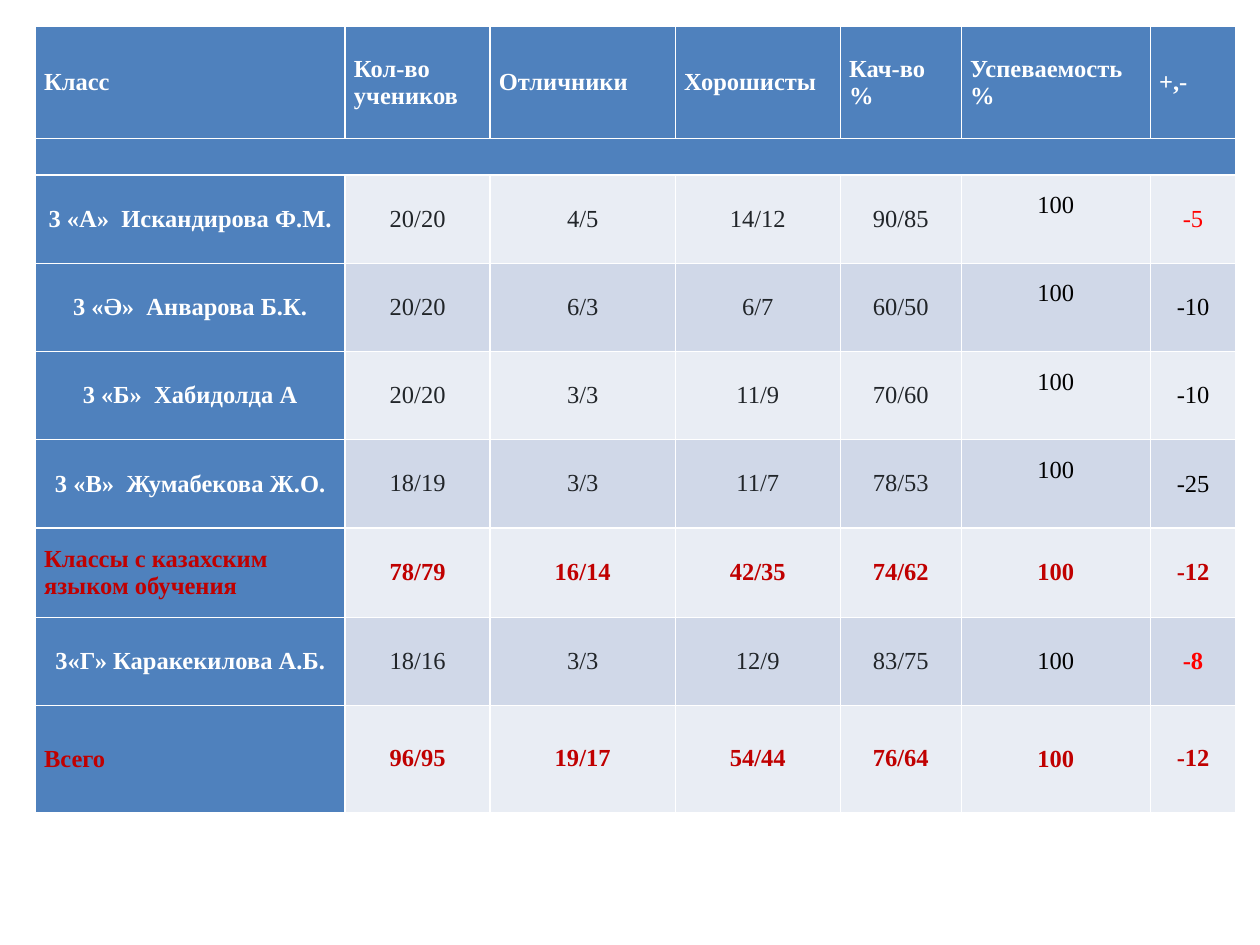
"""Build a slide with a table of third-grade class results."""
from pptx import Presentation
from pptx.dml.color import RGBColor
from pptx.enum.text import MSO_ANCHOR, PP_ALIGN
from pptx.util import Inches, Pt

BLUE, WHITE, INK, BLACK = "4F81BD", "FFFFFF", "212529", "000000"
RED, DARK_RED = "FF0000", "C00000"
BANDS = ["E9EDF4", "D0D8E8"]


def color(value):
    return RGBColor.from_string(value)


def fill_cell(cell, text, background, ink, bold, align, padding=0, spacing=None):
    cell.fill.solid()
    cell.fill.fore_color.rgb = color(background)
    cell.vertical_anchor = MSO_ANCHOR.MIDDLE
    cell.margin_left = cell.margin_right = Inches(0.07)
    cell.margin_top = cell.margin_bottom = Inches(padding)
    cell.text_frame.text = text
    for paragraph in cell.text_frame.paragraphs:
        paragraph.alignment = align
        paragraph.line_spacing = spacing
        for run in paragraph.runs:
            run.font.name = "Times New Roman"
            run.font.size = Pt(14)
            run.font.bold = bold
            run.font.color.rgb = color(ink)


column_widths = [2.46, 1.15, 1.47, 1.31, 0.96, 1.5, 0.68]
row_heights = [0.89, 0.29, 0.7, 0.7, 0.7, 0.7, 0.71, 0.7, 0.85]
headings = ["Класс", "Кол-во учеников", "Отличники", "Хорошисты",
            "Кач-во\n%", "Успеваемость\n%", "+,-"]
results = [
    ["3 «А»  Искандирова Ф.М.", "20/20", "4/5", "14/12", "90/85", "100", "-5"],
    ["3 «Ә»  Анварова Б.К.", "20/20", "6/3", "6/7", "60/50", "100", "-10"],
    ["3 «Б»  Хабидолда А", "20/20", "3/3", "11/9", "70/60", "100", "-10"],
    ["3 «В»  Жумабекова Ж.О.", "18/19", "3/3", "11/7", "78/53", "100", "-25"],
    ["Классы с казахским языком обучения", "78/79", "16/14", "42/35", "74/62", "100", "-12"],
    ["3«Г» Каракекилова А.Б.", "18/16", "3/3", "12/9", "83/75", "100", "-8"],
    ["Всего", "96/95", "19/17", "54/44", "76/64", "100", "-12"],
]
summary_rows = [4, 6]
red_changes = [0, 5]
raised_rows = range(4)

presentation = Presentation()
presentation.slide_width = Inches(10)
presentation.slide_height = Inches(7.5)
slide = presentation.slides.add_slide(presentation.slide_layouts[6])
table = slide.shapes.add_table(
    len(row_heights), len(column_widths), Inches(0.28), Inches(0.21),
    Inches(sum(column_widths)), Inches(sum(row_heights))).table
table.first_col = True
for column, width in zip(table.columns, column_widths):
    column.width = Inches(width)
for row, height in zip(table.rows, row_heights):
    row.height = Inches(height)

for index, heading in enumerate(headings):
    fill_cell(table.cell(0, index), heading, BLUE, WHITE, True, PP_ALIGN.LEFT)
    divider = table.cell(1, index)
    fill_cell(divider, "", BLUE, WHITE, True, PP_ALIGN.LEFT)
    divider.text_frame.paragraphs[0]._p.get_or_add_endParaRPr().set("sz", "1400")
table.cell(1, 0).merge(table.cell(1, len(headings) - 1))

for number, (name, *counts, success, change) in enumerate(results):
    row = number + 2
    band = BANDS[number % 2]
    summary = number in summary_rows
    fill_cell(table.cell(row, 0), name, BLUE, DARK_RED if summary else WHITE, True,
              PP_ALIGN.LEFT if summary else PP_ALIGN.CENTER)
    for index, count in enumerate(counts, start=1):
        fill_cell(table.cell(row, index), count, band, DARK_RED if summary else INK,
                  summary, PP_ALIGN.CENTER, 0.03, Pt(15))

    success_cell = table.cell(row, 5)
    fill_cell(success_cell, success, band, DARK_RED if summary else BLACK,
              summary, PP_ALIGN.CENTER)
    if number in raised_rows:
        success_cell.margin_bottom = Inches(0.22)

    change_ink = DARK_RED if summary else RED if number in red_changes else BLACK
    padding, spacing = (0.03, Pt(15)) if number >= 5 else (0, None)
    fill_cell(table.cell(row, 6), change, band, change_ink, number >= 4,
              PP_ALIGN.CENTER, padding, spacing)

presentation.save("out.pptx")
